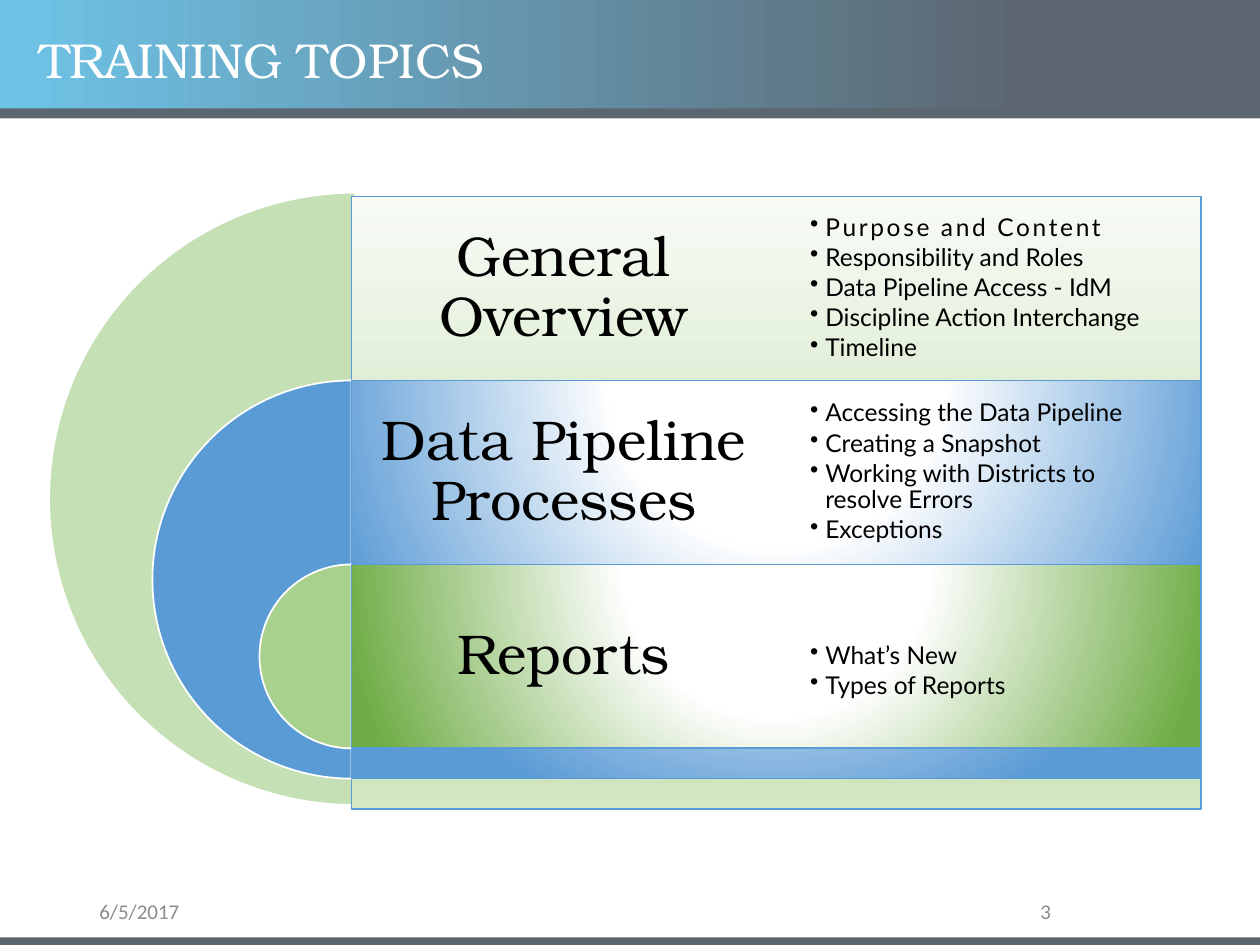
import dataclasses
import typing

import lxml.etree
import pptx
import pptx.dml.color
import pptx.enum.shapes
import pptx.enum.text
import pptx.oxml
import pptx.oxml.ns
import pptx.util

Inches = pptx.util.Inches
Shape = pptx.enum.shapes.MSO_SHAPE
Align = pptx.enum.text.PP_ALIGN
qn = pptx.oxml.ns.qn


@dataclasses.dataclass(frozen=True)
class Theme:
    slate: str = "5C6670"
    sky: str = "6EC4E8"
    white: str = "FFFFFF"
    black: str = "000000"
    grey: str = "8C8C8C"
    blue: str = "5B9BD5"
    green: str = "70AD47"
    serif: str = "TeX Gyre Bonum"
    sans: str = "Lato"
    footer: str = "Calibri"
    title_size: float = 28
    heading_size: float = 32
    topic_size: float = 14
    footer_size: float = 12


THEME = Theme()


class Frame(typing.NamedTuple):
    left: float
    top: float
    width: float
    height: float

    def lengths(self) -> list:
        return [Inches(value) for value in self]


class Gradient(typing.NamedTuple):
    stops: tuple
    angle: typing.Optional[int] = None


class TextStyle(typing.NamedTuple):
    font: str
    size: float
    color: str
    align: Align = Align.LEFT
    line_spacing: float = 1.0
    space_after: float = 0
    bulleted: bool = False


class Band(typing.NamedTuple):
    heading: str
    topics: tuple
    height: float
    pie: Frame
    pie_color: str
    fill: Gradient
    topic_drop: float = 0
    first_tracking: float = 0


TITLE = TextStyle(THEME.serif, THEME.title_size, THEME.white, line_spacing=0.9)
HEADING = TextStyle(THEME.serif, THEME.heading_size, THEME.black, Align.CENTER, 0.9, 11.2)
TOPIC = TextStyle(THEME.sans, THEME.topic_size, THEME.black, Align.LEFT, 0.9, 2.1, True)
DATE = TextStyle(THEME.footer, THEME.footer_size, THEME.grey)
NUMBER = DATE._replace(align=Align.RIGHT)

BAND_LEFT, BAND_TOP, BAND_WIDTH, BAND_STEP = 2.79, 1.56, 6.74, 1.46
COLUMN = BAND_WIDTH / 2


def glow(color: str) -> Gradient:
    return Gradient(((0, THEME.white), (35, THEME.white), (100, color)))


BANDS = (
    Band("General Overview",
         ("Purpose and Content", "Responsibility and Roles", "Data Pipeline Access - IdM",
          "Discipline Action Interchange", "Timeline"),
         4.86, Frame(0.39, 1.53, 4.86, 4.86), "C5E0B4",
         Gradient(((0, "F8FBF6"), (74, "BEDCAA"), (83, "BEDCAA"), (100, "D4E8C6")), 90),
         first_tracking=1.5),
    Band("Data Pipeline Processes",
         ("Accessing the Data Pipeline", "Creating a Snapshot",
          "Working with Districts to resolve Errors", "Exceptions"),
         3.16, Frame(1.21, 3.02, 3.16, 3.16), THEME.blue, glow(THEME.blue)),
    Band("Reports", ("What’s New", "Types of Reports"),
         1.46, Frame(2.06, 4.48, 1.46, 1.46), "A9D18E", glow(THEME.green), topic_drop=0.24),
)


def rgb(color: str) -> pptx.dml.color.RGBColor:
    return pptx.dml.color.RGBColor.from_string(color)


def apply(target: typing.Any, values: dict) -> None:
    for name, value in values.items():
        setattr(target, name, value)


def fill_gradient(shape: typing.Any, gradient: Gradient) -> None:
    shape.fill.gradient()
    element = shape._element.spPr.find(qn("a:gradFill"))
    for child in list(element):
        element.remove(child)
    stops = lxml.etree.SubElement(element, qn("a:gsLst"))
    for position, color in gradient.stops:
        stop = lxml.etree.SubElement(stops, qn("a:gs"), pos=str(position * 1000))
        lxml.etree.SubElement(stop, qn("a:srgbClr"), val=color)
    if gradient.angle is None:
        shade = lxml.etree.SubElement(element, qn("a:path"))
        shade.set("path", "circle")
        lxml.etree.SubElement(shade, qn("a:fillToRect"),
                              l="50000", t="-80000", r="50000", b="180000")
    else:
        lxml.etree.SubElement(element, qn("a:lin"), ang=str(gradient.angle * 60000), scaled="0")


def draw_shape(shapes: typing.Any, kind: Shape, frame: Frame,
               fill: typing.Union[str, Gradient], line: typing.Optional[str] = None) -> typing.Any:
    shape = shapes.add_shape(kind, *frame.lengths())
    shape.shadow.inherit = False
    if isinstance(fill, Gradient):
        fill_gradient(shape, fill)
    else:
        shape.fill.solid()
        shape.fill.fore_color.rgb = rgb(fill)
    if line:
        shape.line.color.rgb = rgb(line)
        shape.line.width = pptx.util.Pt(1)
    else:
        shape.line.fill.background()
    return shape


def write_text(box: typing.Any, lines: typing.Sequence[str], style: TextStyle,
               inset: typing.Optional[float] = None, drop: float = 0,
               first_tracking: float = 0) -> None:
    frame = box.text_frame
    apply(frame, {"word_wrap": True, "auto_size": pptx.enum.text.MSO_AUTO_SIZE.NONE,
                  "vertical_anchor": pptx.enum.text.MSO_ANCHOR.MIDDLE})
    if inset is not None:
        apply(frame, {"margin_left": Inches(inset), "margin_right": Inches(inset),
                      "margin_top": Inches(inset + drop), "margin_bottom": Inches(inset)})
    for index, line in enumerate(lines):
        para = frame.add_paragraph() if index else frame.paragraphs[0]
        apply(para, {"alignment": style.align, "line_spacing": style.line_spacing,
                     "space_after": pptx.util.Pt(style.space_after)})
        if style.bulleted:
            properties = para._p.get_or_add_pPr()
            properties.set("marL", str(Inches(0.12)))
            properties.set("indent", str(Inches(-0.12)))
            lxml.etree.SubElement(properties, qn("a:buChar"), char="•")
        span = para.add_run()
        span.text = line
        apply(span.font, {"name": style.font, "size": pptx.util.Pt(style.size), "bold": False})
        span.font.color.rgb = rgb(style.color)
        if first_tracking and index == 0:
            span._r.get_or_add_rPr().set("spc", str(int(first_tracking * 100)))


def draw_text(shapes: typing.Any, frame: Frame, lines: typing.Sequence[str],
              style: TextStyle, **options: float) -> None:
    write_text(shapes.add_textbox(*frame.lengths()), lines, style, **options)


def draw_band(shapes: typing.Any, band: Band, top: float) -> None:
    pie = draw_shape(shapes, Shape.PIE, band.pie, band.pie_color, THEME.white)
    pie.adjustments[0], pie.adjustments[1] = 54, 162
    draw_shape(shapes, Shape.RECTANGLE, Frame(BAND_LEFT, top, BAND_WIDTH, band.height),
               band.fill, THEME.blue)
    draw_text(shapes, Frame(BAND_LEFT, top, COLUMN, BAND_STEP), [band.heading], HEADING, inset=0.13)
    draw_text(shapes, Frame(BAND_LEFT + COLUMN, top, COLUMN, BAND_STEP), band.topics, TOPIC,
              inset=0.27, drop=band.topic_drop, first_tracking=band.first_tracking)


def main() -> None:
    deck = pptx.Presentation()
    apply(deck, {"slide_width": Inches(10), "slide_height": Inches(7.5)})
    page = deck.slides.add_slide(deck.slide_layouts[5])
    header = Gradient(((0, THEME.sky), (81, THEME.slate)), 0)
    for frame, fill in ((Frame(0, 0, 10, 0.87), header),
                        (Frame(0, 0.86, 10, 0.08), THEME.slate),
                        (Frame(0, 7.44, 10, 0.06), THEME.slate)):
        draw_shape(page.shapes, Shape.RECTANGLE, frame, fill)
    draw_text(page.shapes, Frame(0.69, 7.12, 2.25, 0.23), ["6/5/2017"], DATE)
    draw_text(page.shapes, Frame(7.06, 7.12, 1.38, 0.23), ["3"], NUMBER)

    title = page.shapes.title
    apply(title, dict(zip(("left", "top", "width", "height"),
                          Frame(0.21, 0.21, 8.62, 0.57).lengths())))
    write_text(title, ["TRAINING TOPICS"], TITLE)
    page.shapes._spTree.append(title._element)

    diagram = page.shapes.add_group_shape()
    for index, band in enumerate(BANDS):
        draw_band(diagram.shapes, band, BAND_TOP + index * BAND_STEP)
    deck.save("out.pptx")


if __name__ == "__main__":
    main()
